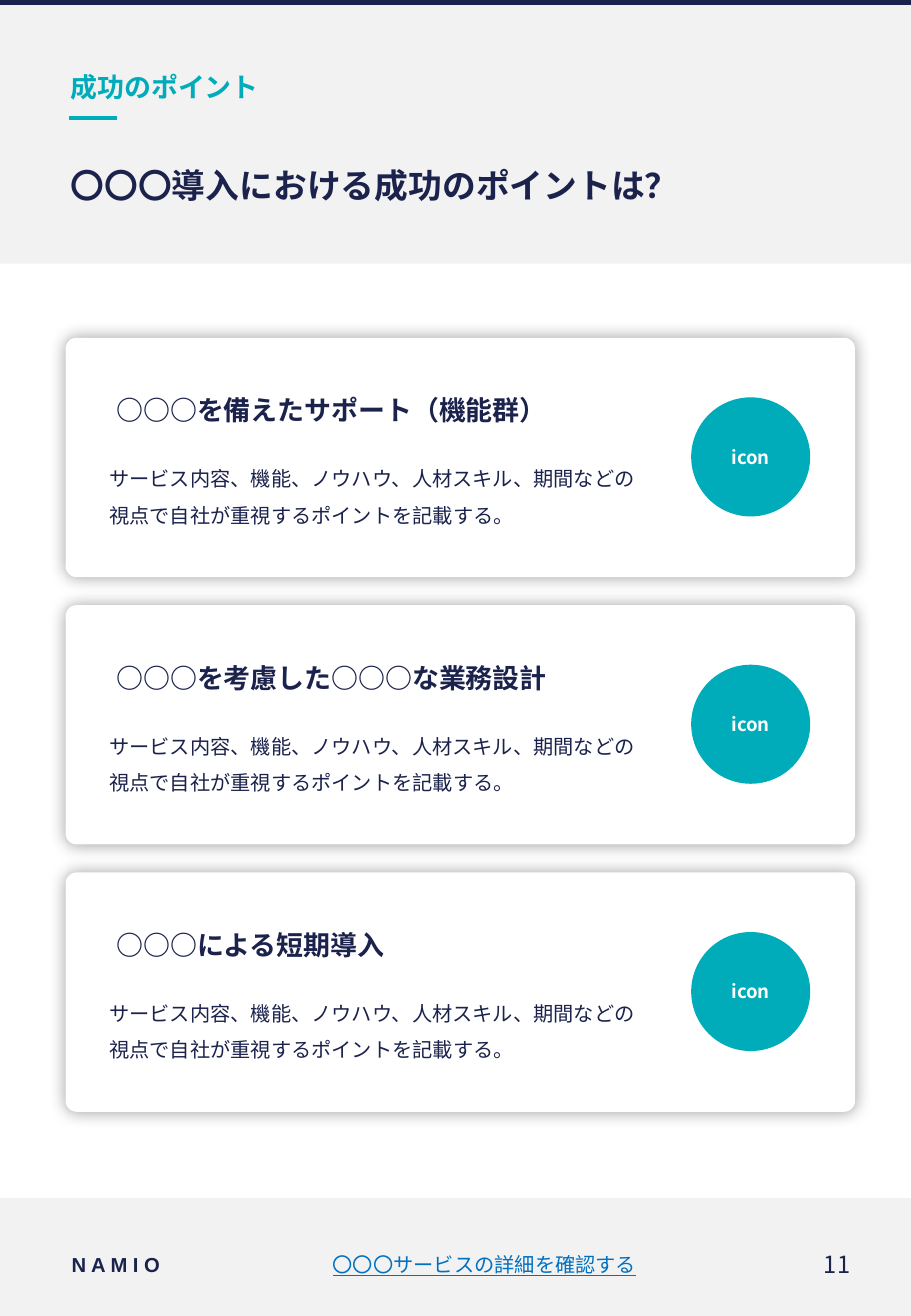
from dataclasses import dataclass

from lxml import etree
from pptx import Presentation, util as u
from pptx.dml.color import RGBColor
from pptx.enum import shapes, text
from pptx.oxml import ns, parse_xml

NAVY, TEAL, GREY, WHITE, LINK = "1B224C", "00ACBA", "F2F2F2", "FFFFFF", "0070C0"
LATIN, JAPANESE = "Arial", "Noto Sans CJK JP"
LEFT, CENTER, RIGHT = text.PP_ALIGN.LEFT, text.PP_ALIGN.CENTER, text.PP_ALIGN.RIGHT
TOP, MIDDLE = text.MSO_ANCHOR.TOP, text.MSO_ANCHOR.MIDDLE
CARD_TOP, CARD_PITCH = 2.78, 2.2
ADVICE = "サービス内容、機能、ノウハウ、人材スキル、期間などの視点で自社が重視するポイントを記載する。"


@dataclass
class Box:
    left: float
    top: float
    width: float
    height: float

    def lengths(self) -> list:
        return [u.Inches(v) for v in (self.left, self.top, self.width, self.height)]


@dataclass
class Style:
    size: float
    color: str = NAVY
    font: str = LATIN
    bold: bool = False
    underline: bool = False
    align: int = LEFT
    anchor: int = MIDDLE
    inset: float = 0.04
    wrap: bool = True
    line: float = 1.0
    before: float = 0
    after: float = 0


SECTION = Style(16, TEAL, bold=True, before=7.5)
TITLE = Style(20, bold=True)
HEADING = Style(16, font=JAPANESE, bold=True, inset=0.1, after=6)
BODY = Style(12, anchor=TOP, line=1.5, after=4.3)
ICON = Style(11, WHITE, JAPANESE, bold=True, align=CENTER, inset=0.1)
BRAND = Style(12, bold=True, wrap=False)
DETAILS = Style(12, LINK, underline=True, align=CENTER)
PAGE = Style(14, font=JAPANESE, align=RIGHT)


def rgb(color: str) -> RGBColor:
    return RGBColor.from_string(color)


def assign(target, values: dict) -> None:
    for name, value in values.items():
        setattr(target, name, value)


def write(shape, words: str, style: Style) -> None:
    frame = shape.text_frame
    inset = u.Inches(style.inset)
    assign(frame, {
        "auto_size": text.MSO_AUTO_SIZE.NONE, "word_wrap": style.wrap,
        "vertical_anchor": style.anchor, "margin_left": inset,
        "margin_right": inset, "margin_top": inset, "margin_bottom": inset,
    })
    paragraph = frame.paragraphs[0]
    assign(paragraph, {
        "alignment": style.align, "line_spacing": style.line,
        "space_before": u.Pt(style.before), "space_after": u.Pt(style.after),
    })
    run = paragraph.add_run()
    run.text = words
    assign(run.font, {
        "name": style.font, "size": u.Pt(style.size),
        "bold": style.bold, "underline": style.underline,
    })
    run.font.color.rgb = rgb(style.color)
    east_asian = etree.SubElement(run.font._element, ns.qn("a:ea"))
    east_asian.set("typeface", JAPANESE)


def add_text(slide, box: Box, words: str, style: Style) -> None:
    write(slide.shapes.add_textbox(*box.lengths()), words, style)


def add_filled(slide, kind: int, box: Box, color: str):
    shape = slide.shapes.add_shape(kind, *box.lengths())
    shape.shadow.inherit = False
    shape.fill.solid()
    shape.fill.fore_color.rgb = rgb(color)
    shape.line.fill.background()
    return shape


def fill_placeholder(placeholder, box: Box, words: str, style: Style) -> None:
    assign(placeholder, dict(zip(("left", "top", "width", "height"), box.lengths())))
    write(placeholder, words, style)
    # Bring the placeholder in front of the header band
    placeholder.element.getparent().append(placeholder.element)


def add_soft_shadow(shape) -> None:
    effects = shape.element.spPr.find(ns.qn("a:effectLst"))
    effects.append(parse_xml(
        f'<a:outerShdw {ns.nsdecls("a")} blurRad="{u.Pt(10)}" dist="0" dir="0" '
        'algn="ctr" rotWithShape="0"><a:srgbClr val="000000">'
        '<a:alpha val="40000"/></a:srgbClr></a:outerShdw>'))


def add_card(slide, top: float, heading: str) -> None:
    card = add_filled(slide, shapes.MSO_SHAPE.ROUNDED_RECTANGLE,
                      Box(0.54, top, 6.5, 1.97), WHITE)
    card.adjustments[0] = 0.046
    add_soft_shadow(card)
    add_text(slide, Box(0.86, top + 0.4, 4.47, 0.39), heading, HEADING)
    add_text(slide, Box(0.86, top + 0.92, 4.47, 0.79), ADVICE, BODY)
    icon = add_filled(slide, shapes.MSO_SHAPE.OVAL,
                      Box(5.69, top + 0.49, 0.98, 0.98), TEAL)
    write(icon, "icon", ICON)


def main() -> None:
    deck = Presentation()
    deck.slide_width, deck.slide_height = u.Inches(7.5), u.Inches(10.83)
    slide = deck.slides.add_slide(deck.slide_layouts[1])

    # Header and footer bands
    for band, color in ((Box(0, 0, 7.5, 2.17), GREY),
                        (Box(0, 0, 7.5, 0.04), NAVY),
                        (Box(0, 9.86, 7.5, 0.97), GREY)):
        add_filled(slide, shapes.MSO_SHAPE.RECTANGLE, band, color)

    # Accent under the section name
    accent = slide.shapes.add_connector(
        shapes.MSO_CONNECTOR.STRAIGHT,
        *(u.Inches(v) for v in (0.57, 0.97, 0.96, 0.97)))
    accent.line.color.rgb = rgb(TEAL)
    accent.line.width = u.Pt(2.5)
    etree.SubElement(accent._element.spPr, ns.qn("a:effectLst"))

    # Section name and title
    section = slide.placeholders[1]
    fill_placeholder(section, Box(0.54, 0.52, 6.49, 0.39), "成功のポイント", SECTION)
    section_format = section.text_frame.paragraphs[0]._p.get_or_add_pPr()
    assign(section_format, {"marL": 0, "indent": 0})
    etree.SubElement(section_format, ns.qn("a:buNone"))
    fill_placeholder(slide.shapes.title, Box(0.54, 1.13, 6.5, 0.79),
                     "〇〇〇導入における成功のポイントは？", TITLE)

    # Success points
    headings = ("○○○を備えたサポート（機能群）",
                "○○○を考慮した○○○な業務設計",
                "○○○による短期導入")
    for row, heading in enumerate(headings):
        add_card(slide, CARD_TOP + row * CARD_PITCH, heading)

    # Footer
    add_text(slide, Box(0.55, 10.25, 1.57, 0.31), "N A M I O", BRAND)
    add_text(slide, Box(2.12, 10.25, 3.74, 0.31), "〇〇〇サービスの詳細を確認する", DETAILS)
    add_text(slide, Box(5.86, 10.25, 1.18, 0.31), "11", PAGE)

    deck.save("out.pptx")


if __name__ == "__main__":
    main()
